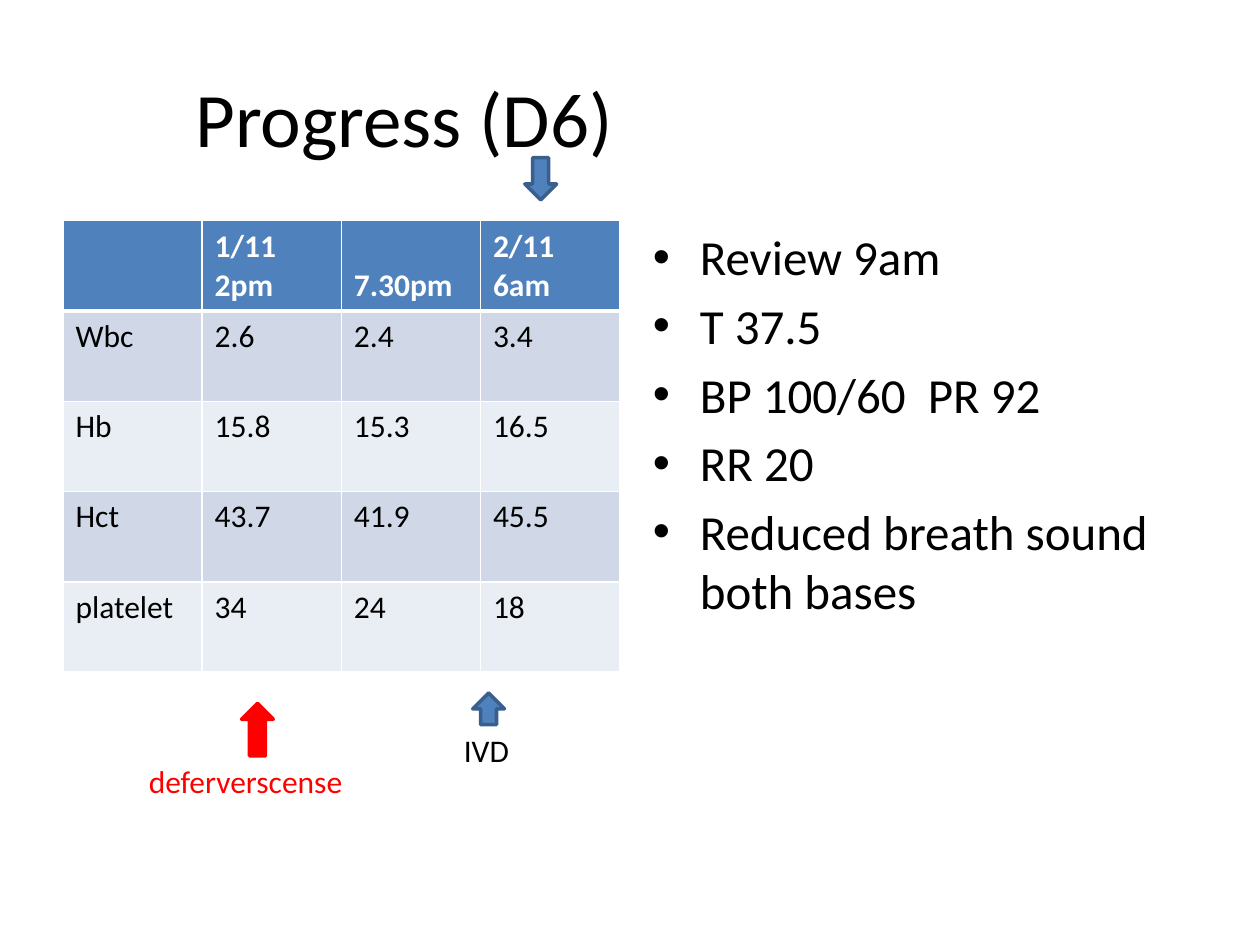
from lxml import etree
from pptx import Presentation
from pptx import util as u
from pptx.dml.color import RGBColor
from pptx.enum import shapes, text
from pptx.oxml import ns

BLACK = RGBColor(0x00, 0x00, 0x00)
WHITE = RGBColor(0xFF, 0xFF, 0xFF)
RED = RGBColor(0xFF, 0x00, 0x00)
BLUE = RGBColor(0x4F, 0x81, 0xBD)
DARK_BLUE = RGBColor(0x3A, 0x5F, 0x8C)
BANDS = (RGBColor(0xD0, 0xD8, 0xE8), RGBColor(0xE9, 0xED, 0xF4))

RESULTS = [
    ["", "1/11\n2pm", "7.30pm", "2/11 6am"],
    ["Wbc", "2.6", "2.4", "3.4"],
    ["Hb", "15.8", "15.3", "16.5"],
    ["Hct", "43.7", "41.9", "45.5"],
    ["platelet", "34", "24", "18"],
]
FINDINGS = [
    "Review 9am",
    "T 37.5",
    "BP 100/60  PR 92",
    "RR 20",
    "Reduced breath sound both bases",
]


class SlideBuilder:
    font = "Calibri"
    body_size = 18

    def __init__(self, slide):
        self.slide = slide

    def add_lines(self, frame, lines, size=body_size, color=BLACK, bold=False):
        for index, line in enumerate(lines):
            paragraph = frame.paragraphs[0] if index == 0 else frame.add_paragraph()
            run = paragraph.add_run()
            run.text = line
            run.font.name = self.font
            run.font.size = u.Pt(size)
            run.font.bold = bold
            run.font.color.rgb = color

    def text_box(self, box, lines, size=body_size, color=BLACK):
        shape = self.slide.shapes.add_textbox(*map(u.Cm, box))
        frame = shape.text_frame
        frame.word_wrap = True
        self.add_lines(frame, lines, size, color)
        return frame

    def title(self, box, line):
        frame = self.text_box(box, [line], 44)
        frame.vertical_anchor = text.MSO_ANCHOR.MIDDLE
        frame.paragraphs[0].alignment = text.PP_ALIGN.CENTER

    def bullets(self, box, lines, size=28):
        frame = self.text_box(box, lines, size)
        for paragraph in frame.paragraphs:
            paragraph.space_before = u.Pt(size * 0.2)
            properties = paragraph._p.get_or_add_pPr()
            properties.set("marL", str(u.Cm(0.95)))
            properties.set("indent", str(u.Cm(-0.95)))
            font = etree.SubElement(properties, ns.qn("a:buFont"))
            font.set("typeface", "Arial")
            etree.SubElement(properties, ns.qn("a:buChar")).set("char", "•")

    def arrow(self, kind, box, fill=BLUE, line=DARK_BLUE):
        shape = self.slide.shapes.add_shape(kind, *map(u.Cm, box))
        shape.shadow.inherit = False
        shape.fill.solid()
        shape.fill.fore_color.rgb = fill
        shape.line.color.rgb = line
        shape.line.width = u.Pt(2)

    def borders(self, cell, top, bottom):
        properties = cell._tc.get_or_add_tcPr()
        for side, width in (("L", 1), ("R", 1), ("T", top), ("B", bottom)):
            line = etree.SubElement(properties, ns.qn(f"a:ln{side}"))
            line.set("w", str(u.Pt(width)))
            fill = etree.SubElement(line, ns.qn("a:solidFill"))
            etree.SubElement(fill, ns.qn("a:srgbClr")).set("val", str(WHITE))

    def table(self, box, rows):
        frame = self.slide.shapes.add_table(len(rows), len(rows[0]), *map(u.Cm, box))
        table = frame.table
        for r, row in enumerate(rows):
            header = r == 0
            for c, value in enumerate(row):
                cell = table.cell(r, c)
                self.borders(cell, 3 if r == 1 else 1, 3 if header else 1)
                cell.fill.solid()
                cell.fill.fore_color.rgb = BLUE if header else BANDS[(r - 1) % 2]
                # Single-line times sit level with the second header line
                if header:
                    cell.vertical_anchor = text.MSO_ANCHOR.BOTTOM
                if value:
                    self.add_lines(cell.text_frame, value.split("\n"),
                                   color=WHITE if header else BLACK, bold=header)


def main():
    presentation = Presentation()
    presentation.slide_width = u.Cm(25.4)
    presentation.slide_height = u.Cm(19.05)
    builder = SlideBuilder(presentation.slides.add_slide(presentation.slide_layouts[6]))
    arrows = shapes.MSO_SHAPE

    # Title, blood results and review findings
    builder.title((1.27, 0.76, 13.76, 3.18), "Progress (D6)")
    builder.table((1.27, 4.45, 11.22, 9.1), RESULTS)
    builder.bullets((12.91, 4.45, 11.22, 12.57), FINDINGS)

    # Event markers below the table
    builder.text_box((9.1, 14.61, 2.75, 1.03), ["IVD"])
    builder.arrow(arrows.UP_ARROW, (9.53, 13.97, 0.64, 0.64))
    builder.text_box((2.75, 15.24, 4.45, 1.03), ["deferverscense"], color=RED)
    builder.arrow(arrows.UP_ARROW, (4.87, 14.18, 0.64, 1.06), RED, RED)

    # Marker for the latest result
    builder.arrow(arrows.DOWN_ARROW, (10.58, 3.18, 0.64, 0.85))

    presentation.save("out.pptx")


if __name__ == "__main__":
    main()
